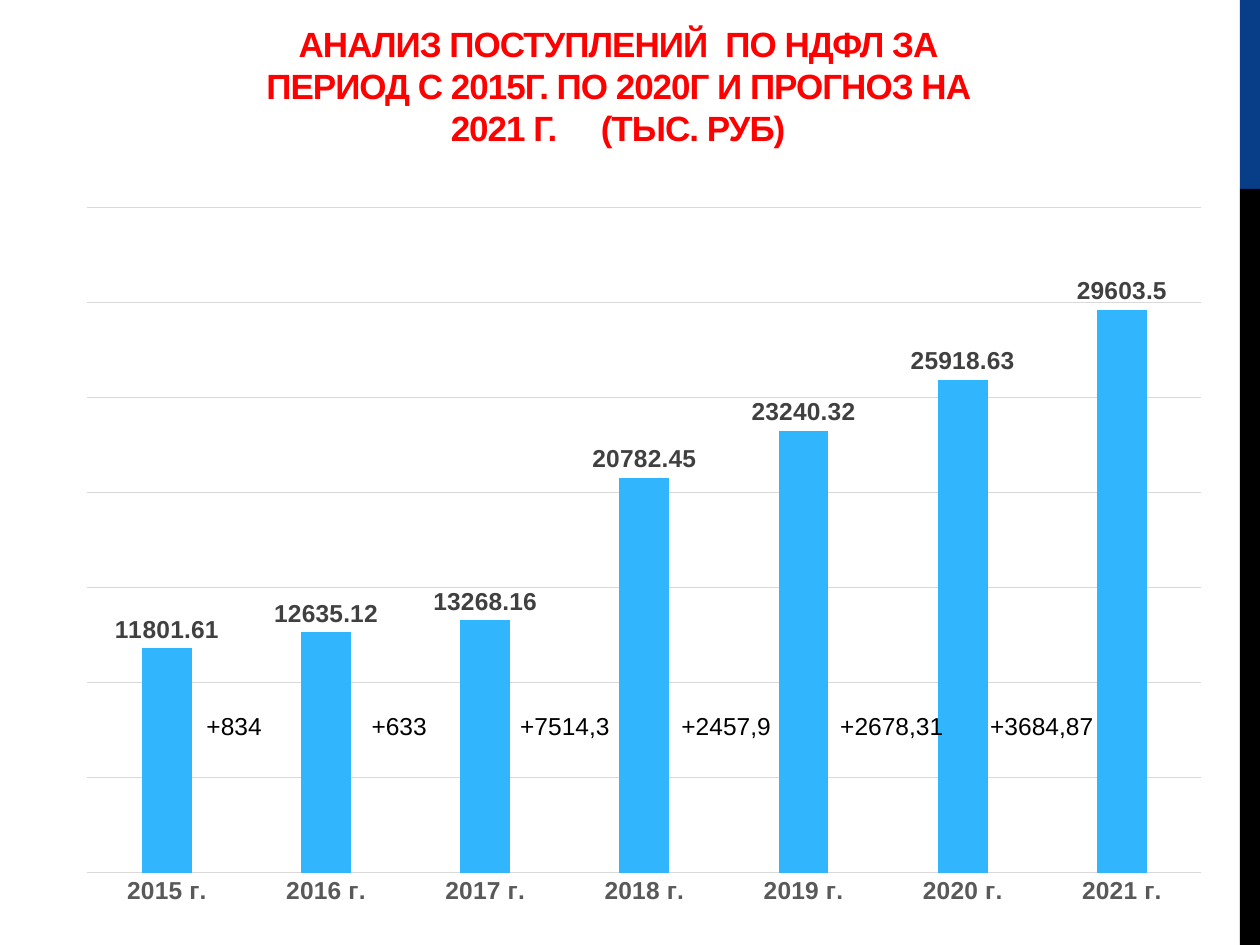
from pptx import Presentation
from pptx.chart.data import CategoryChartData
from pptx.dml.color import RGBColor
from pptx.enum.chart import XL_CHART_TYPE, XL_LABEL_POSITION, XL_TICK_MARK
from pptx.enum.shapes import MSO_SHAPE
from pptx.enum.text import MSO_ANCHOR, PP_ALIGN
from pptx.util import Inches, Pt

WIDTH, HEIGHT = 10, 7.5
FONT = "Arial"
TITLE = [
    ("АНАЛИЗ ПОСТУПЛЕНИЙ", -0.6), (" ", 4.4),
    ("ПО НДФЛ ЗА ПЕРИОД С 2015Г. ПО 2020Г И ПРОГНОЗ НА 2021 Г.", -0.6),
    (" ", 19.2), ("(ТЫС. РУБ)", -0.6),
]
RECEIPTS = {
    "2015 г.": 11801.61, "2016 г.": 12635.12, "2017 г.": 13268.16,
    "2018 г.": 20782.45, "2019 г.": 23240.32, "2020 г.": 25918.63,
    "2021 г.": 29603.5,
}
GROWTH = [
    ("+834", 1.54, 0.71), ("+633", 2.85, 0.71), ("+7514,3", 4.03, 0.91),
    ("+2457,9", 5.31, 1.1), ("+2678,31", 6.57, 1.18), ("+3684,87", 7.76, 1.18),
]
GROWTH_TOP, GROWTH_HEIGHT = 5.59, 0.34
STRIPE_WIDTH = 0.16
STRIPES = [("073E87", 0, 0.2), ("000000", 0.2, 0.8)]


def color(value):
    return RGBColor.from_string(value)


def style(font, size, fill, bold=False):
    font.name, font.size, font.bold = FONT, Pt(size), bold
    font.color.rgb = color(fill)


def write(paragraph, text, size=14, fill="000000", bold=False, spacing=0):
    run = paragraph.add_run()
    run.text = text
    style(run.font, size, fill, bold)
    if spacing:
        run.font._element.set("spc", str(round(spacing * 100)))


def grey_line(line):
    line.color.rgb = color("D9D9D9")
    line.width = Pt(0.75)


def place(left, top, width, height):
    return [Inches(length) for length in (left, top, width, height)]


deck = Presentation()
deck.slide_width, deck.slide_height = Inches(WIDTH), Inches(HEIGHT)
slide = deck.slides.add_slide(deck.slide_layouts[5])

for fill, start, share in STRIPES:
    stripe = slide.shapes.add_shape(
        MSO_SHAPE.RECTANGLE,
        *place(WIDTH - STRIPE_WIDTH, start * HEIGHT, STRIPE_WIDTH, share * HEIGHT))
    stripe.shadow.inherit = False
    stripe.fill.solid()
    stripe.fill.fore_color.rgb = color(fill)
    stripe.line.fill.background()

title = slide.shapes.title
title.left, title.top, title.width, title.height = place(1.77, 0.02, 6.27, 1.21)
title.text_frame.word_wrap = True
title.text_frame.vertical_anchor = MSO_ANCHOR.BOTTOM
heading = title.text_frame.paragraphs[0]
heading.alignment = PP_ALIGN.CENTER
for part, spacing in TITLE:
    write(heading, part, size=20, fill="FF0000", bold=True, spacing=spacing)

receipts = CategoryChartData()
receipts.categories = list(RECEIPTS)
receipts.add_series("Series 1", list(RECEIPTS.values()))
chart = slide.shapes.add_chart(
    XL_CHART_TYPE.COLUMN_CLUSTERED, *place(0.51, 1.53, 9.21, 5.77), receipts).chart
style(chart.font, 10, "000000")
chart.has_legend = False
chart.has_title = False

years = chart.category_axis
years.major_tick_mark = XL_TICK_MARK.NONE
style(years.tick_labels.font, 14, "595959", bold=True)
grey_line(years.format.line)

amounts = chart.value_axis
amounts.visible = False
amounts.minimum_scale, amounts.maximum_scale, amounts.major_unit = 0, 35000, 5000
amounts.has_major_gridlines = True
grey_line(amounts.major_gridlines.format.line)

plot = chart.plots[0]
plot.gap_width, plot.overlap = 219, -27
plot.vary_by_categories = False
columns = plot.series[0]
columns.format.fill.solid()
columns.format.fill.fore_color.rgb = color("31B6FD")
labels = columns.data_labels
labels.show_value = True
labels.position = XL_LABEL_POSITION.OUTSIDE_END
style(labels.font, 14, "404040", bold=True)

for growth, left, width in GROWTH:
    frame = slide.shapes.add_textbox(
        *place(left, GROWTH_TOP, width, GROWTH_HEIGHT)).text_frame
    frame.word_wrap = True
    frame.margin_right = 0
    write(frame.paragraphs[0], growth)

deck.save("out.pptx")
